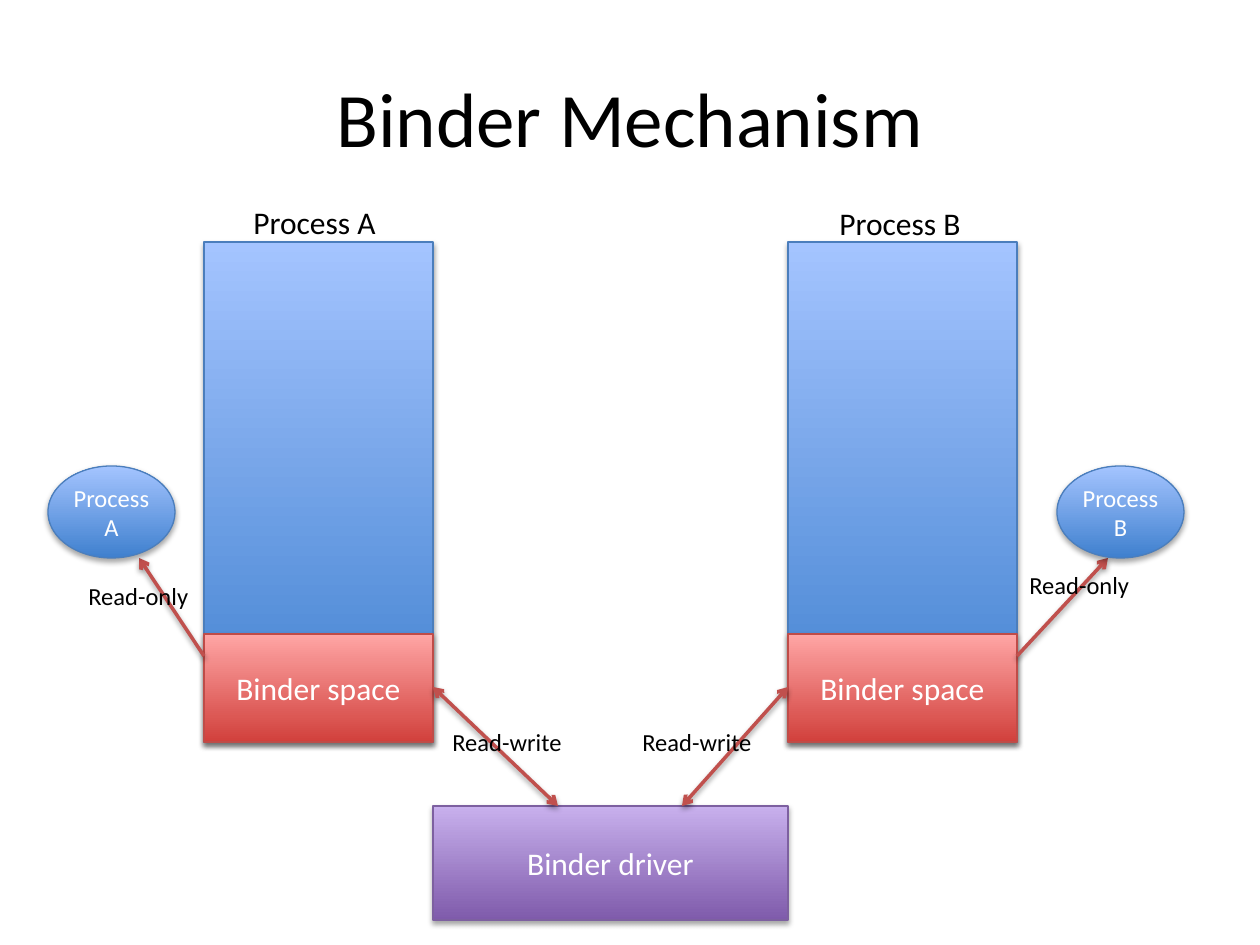
from pptx import Presentation
from pptx.dml.color import RGBColor
from pptx.enum.shapes import MSO_CONNECTOR as Conn, MSO_SHAPE as Kind
from pptx.enum.text import MSO_ANCHOR as Anchor, MSO_AUTO_SIZE as Auto, PP_ALIGN as Align
from pptx.oxml.ns import qn
from pptx.util import Emu, Pt
from lxml.etree import SubElement as Sub

FONT = "Calibri"
BLACK, WHITE, ARROW = "000000", "FFFFFF", "C0504D"
# bottom colour, top colour, outline
BLUE = ("3F80CE", "A4C4FF", "4B7EBC")
RED = ("D1403C", "FFA6A5", "BF4C48")
PURPLE = ("7F5BAB", "C8B0ED", "7D60A0")

# Layout in px, 126 to the inch
WIDE, HIGH = 1260, 945
COL_W, COL_TOP, COL_END = 229, 242, 742
SPACE_TOP, DRIVER_TOP, DRIVER_H = 634, 806, 114
OVAL_TOP, OVAL_W, OVAL_H = 466, 127, 92
READ_Y, WRITE_Y = 656, 687

TITLE = ("Binder Mechanism", 63, 38, 1134, 157)
# One entry per process; "in" faces the driver, "out" faces the oval
SIDES = [
    {"name": "A", "x": 204, "in": 433, "out": 204, "oval": 48,
     "tip": 139, "foot": 558, "head": (241, 197), "read": (76, 575), "write": 440},
    {"name": "B", "x": 788, "in": 788, "out": 1017, "oval": 1057,
     "tip": 1108, "foot": 682, "head": (827, 198), "read": (1017, 564), "write": 630},
]


def px(n):
    return Emu(round(n * 914400 / 126))


def rgb(code):
    return RGBColor.from_string(code)


def write(frame, lines, size, color, align):
    for i, line in enumerate(lines):
        para = frame.paragraphs[0] if i == 0 else frame.add_paragraph()
        para.alignment = align
        run = para.add_run()
        run.text = line
        run.font.name, run.font.size = FONT, Pt(size)
        run.font.color.rgb = rgb(color)


def shade(shape, alpha, dist):
    props = shape._element.spPr
    list_ = props.find(qn("a:effectLst"))
    if list_ is None:
        list_ = Sub(props, qn("a:effectLst"))
    outer = Sub(list_, qn("a:outerShdw"), blurRad="40000", dist=str(dist),
                dir="5400000", rotWithShape="0")
    tint = Sub(outer, qn("a:srgbClr"), val=BLACK)
    Sub(tint, qn("a:alpha"), val=str(alpha * 1000))


def block(kind, x, y, w, h, look, lines=(), size=18, inset=None):
    shape = slide.shapes.add_shape(kind, px(x), px(y), px(w), px(h))
    low, top, edge = look
    shape.fill.gradient()
    shape.fill.gradient_angle = 90
    for stop, color in zip(shape.fill.gradient_stops, (low, top)):
        stop.color.rgb = rgb(color)
    shape.line.color.rgb = rgb(edge)
    shape.line.width = Pt(0.75)
    shape.shadow.inherit = False
    shade(shape, 35, 23000)
    frame = shape.text_frame
    frame.vertical_anchor = Anchor.MIDDLE
    if inset is not None:
        frame.margin_left = frame.margin_right = px(inset)
    write(frame, lines, size, WHITE, Align.CENTER)


def arrow(x1, y1, x2, y2, ends):
    line = slide.shapes.add_connector(Conn.STRAIGHT, px(x1), px(y1), px(x2), px(y2))
    line.line.color.rgb = rgb(ARROW)
    line.line.width = Pt(2)
    for end in ends:
        Sub(line.line._get_or_add_ln(), qn("a:" + end), type="arrow")
    shade(line, 38, 20000)


def label(text, x, y, w, h, size):
    box = slide.shapes.add_textbox(px(x), px(y), px(w), px(h))
    box.text_frame.word_wrap = False
    box.text_frame.auto_size = Auto.SHAPE_TO_FIT_TEXT
    write(box.text_frame, [text], size, BLACK, Align.LEFT)


deck = Presentation()
deck.slide_width, deck.slide_height = px(WIDE), px(HIGH)
slide = deck.slides.add_slide(deck.slide_layouts[6])

# Title
text, *spot = TITLE
box = slide.shapes.add_textbox(*map(px, spot))
box.text_frame.word_wrap = True
box.text_frame.vertical_anchor = Anchor.MIDDLE
write(box.text_frame, [text], 44, BLACK, Align.CENTER)

# Process memory with its binder space
for side in SIDES:
    block(Kind.RECTANGLE, side["x"], COL_TOP, COL_W, COL_END - COL_TOP, BLUE)
    block(Kind.RECTANGLE, side["x"], SPACE_TOP, COL_W, COL_END - SPACE_TOP,
          RED, ["Binder space"])
    label("Process " + side["name"], *side["head"], 150, 50, 18)

# Driver between the two columns
left, right = (side["in"] for side in SIDES)
block(Kind.RECTANGLE, left, DRIVER_TOP, right - left, DRIVER_H, PURPLE, ["Binder driver"])

# Arrows, their labels and the process ovals
for side in SIDES:
    arrow(side["tip"], OVAL_TOP + OVAL_H, side["out"], READ_Y, ["headEnd"])
    arrow(side["in"], WRITE_Y, side["foot"], DRIVER_TOP, ["headEnd", "tailEnd"])
    label("Read-only", *side["read"], 126, 43, 14)
    label("Read-write", side["write"], 721, 137, 43, 14)
    block(Kind.OVAL, side["oval"], OVAL_TOP, OVAL_W, OVAL_H, BLUE,
          ["Process", side["name"]], 14, 0)

deck.save("out.pptx")
